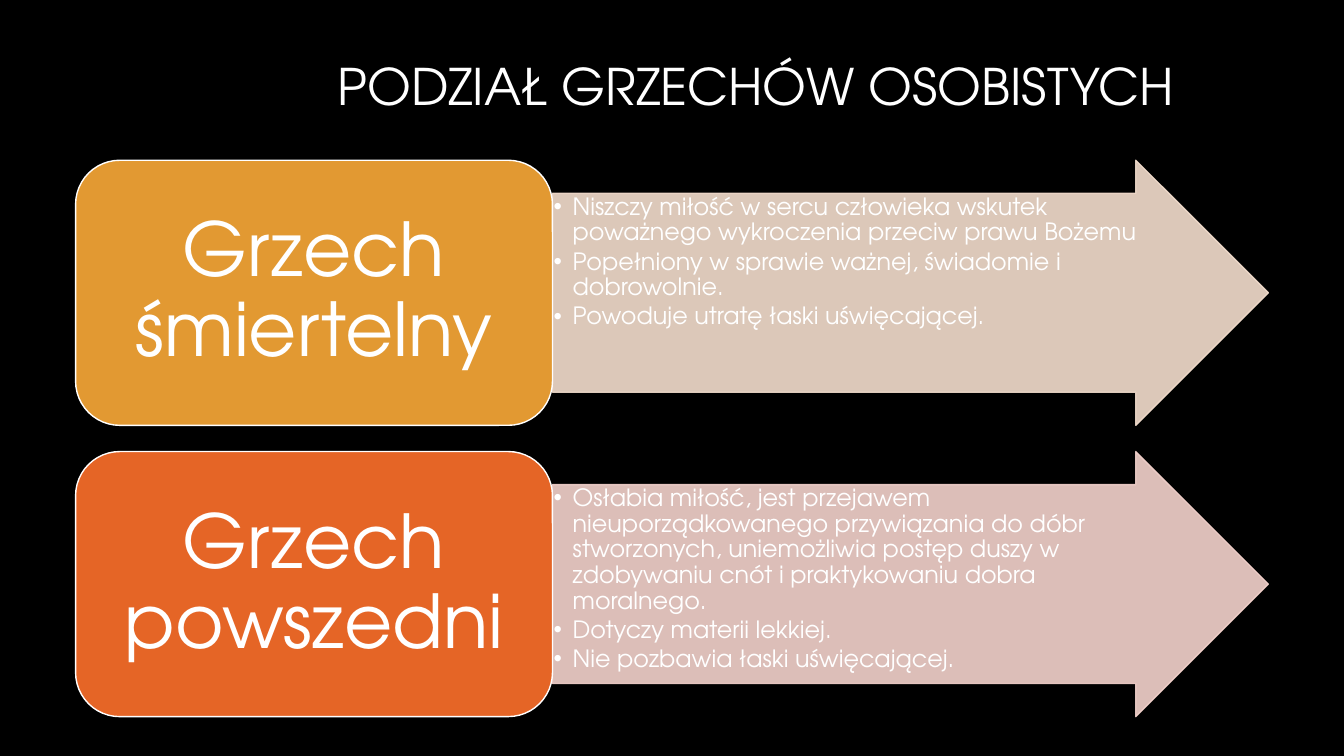
"""Build the slide on the division of personal sins."""
from dataclasses import dataclass

from lxml.etree import SubElement
from pptx import Presentation
from pptx.dml.color import RGBColor
from pptx.dml.fill import FillFormat
from pptx.enum.shapes import MSO_SHAPE
from pptx.enum.text import MSO_ANCHOR, MSO_AUTO_SIZE, PP_ALIGN
from pptx.oxml.ns import qn
from pptx.shapes.autoshape import Shape
from pptx.slide import Slide
from pptx.util import Inches, Pt

FONT = "TeX Gyre Adventor"
WHITE = "FFFFFF"
LABEL_LEFT, LABEL_WIDTH = 0.75, 4.73
ARROW_LEFT, ARROW_WIDTH = LABEL_LEFT + LABEL_WIDTH, 7.1
ROW_TOP, ROW_HEIGHT, ROW_PITCH = 1.59, 2.63, 2.89
LIST_INSET, LIST_WIDTH, LIST_HEIGHT = 0.33, 6.11, 1.97
BULLET_INDENT = 0.19


@dataclass(frozen=True)
class SinKind:
    label: str
    label_color: str
    arrow_color: str
    features: tuple[str, ...]


SIN_KINDS = (
    SinKind("Grzech śmiertelny", "E29932", "F4DECE", (
        "Niszczy miłość w sercu człowieka wskutek poważnego wykroczenia przeciw prawu Bożemu",
        "Popełniony w sprawie ważnej, świadomie i dobrowolnie.",
        "Powoduje utratę łaski uświęcającej.",
    )),
    SinKind("Grzech powszedni", "E56526", "F5D3CD", (
        "Osłabia miłość, jest przejawem nieuporządkowanego przywiązania do dóbr stworzonych, "
        "uniemożliwia postęp duszy w zdobywaniu cnót i praktykowaniu dobra moralnego.",
        "Dotyczy materii lekkiej.",
        "Nie pozbawia łaski uświęcającej.",
    )),
)


def set_color(fill: FillFormat, color: str, opacity: int = 100) -> None:
    fill.solid()
    fill.fore_color.rgb = RGBColor.from_string(color)
    if opacity < 100:
        color_element = fill._xPr.find(qn("a:solidFill"))[0]
        SubElement(color_element, qn("a:alpha"), val=str(opacity * 1000))


def set_attributes(target: object, values: dict[str, object]) -> None:
    for name, value in values.items():
        setattr(target, name, value)


def place(shape: Shape, left: float, top: float, width: float, height: float) -> None:
    set_attributes(shape, {
        "left": Inches(left), "top": Inches(top),
        "width": Inches(width), "height": Inches(height),
    })


def write(shape: Shape, texts: tuple[str, ...], size: float, alignment: PP_ALIGN,
          anchor: MSO_ANCHOR, margins: tuple[float, float],
          space_after: float = 0, bulleted: bool = False) -> None:
    horizontal, vertical = (Inches(margin) for margin in margins)
    frame = shape.text_frame
    set_attributes(frame, {
        "word_wrap": True, "auto_size": MSO_AUTO_SIZE.NONE, "vertical_anchor": anchor,
        "margin_left": horizontal, "margin_right": horizontal,
        "margin_top": vertical, "margin_bottom": vertical,
    })
    frame.text = "\n".join(texts)
    for paragraph in frame.paragraphs:
        set_attributes(paragraph, {
            "alignment": alignment, "line_spacing": 0.9,
            "space_before": Pt(0), "space_after": Pt(space_after),
        })
        if bulleted:
            paragraph.level = 1
            properties = paragraph._p.get_or_add_pPr()
            properties.set("marL", str(Inches(BULLET_INDENT)))
            properties.set("indent", str(-Inches(BULLET_INDENT)))
            SubElement(properties, qn("a:buChar"), char="•")
        for run in paragraph.runs:
            set_attributes(run.font, {"name": FONT, "size": Pt(size)})
            set_color(run.font.fill, WHITE)


def add_block(slide: Slide, kind: MSO_SHAPE, left: float, top: float, width: float,
              color: str, line_color: str, opacity: int = 100) -> Shape:
    shape = slide.shapes.add_shape(
        kind, Inches(left), Inches(top), Inches(width), Inches(ROW_HEIGHT))
    shape.shadow.inherit = False
    set_color(shape.fill, color, opacity)
    set_color(shape.line.fill, line_color, opacity)
    shape.line.width = Pt(1)
    return shape


def add_row(slide: Slide, sin: SinKind, features: Shape, top: float) -> None:
    arrow = add_block(slide, MSO_SHAPE.RIGHT_ARROW, ARROW_LEFT, top, ARROW_WIDTH,
                      sin.arrow_color, sin.arrow_color, 90)
    arrow.adjustments[0] = 0.75
    arrow.adjustments[1] = 0.5

    arrow._element.addnext(features._element)
    place(features, ARROW_LEFT, top + LIST_INSET, LIST_WIDTH, LIST_HEIGHT)
    write(features, sin.features, 17, PP_ALIGN.LEFT, MSO_ANCHOR.TOP, (0.01, 0.01), 2.5, True)

    label = add_block(slide, MSO_SHAPE.ROUNDED_RECTANGLE, LABEL_LEFT, top, LABEL_WIDTH,
                      sin.label_color, WHITE)
    write(label, (sin.label,), 53, PP_ALIGN.CENTER, MSO_ANCHOR.MIDDLE, (0.22, 0.11))


def main() -> None:
    presentation = Presentation()
    set_attributes(presentation, {"slide_width": Inches(13.33), "slide_height": Inches(7.5)})
    slide = presentation.slides.add_slide(presentation.slide_layouts.get_by_name("Two Content"))
    set_color(slide.background.fill, "000000")

    title, *feature_lists = slide.placeholders
    place(title, 3.17, 0.51, 8.57, 0.74)
    write(title, ("PODZIAŁ GRZECHÓW OSOBISTYCH",), 36, PP_ALIGN.RIGHT,
          MSO_ANCHOR.MIDDLE, (0.1, 0.05))

    for row, (sin, features) in enumerate(zip(SIN_KINDS, feature_lists)):
        add_row(slide, sin, features, ROW_TOP + row * ROW_PITCH)
    presentation.save("out.pptx")


if __name__ == "__main__":
    main()
